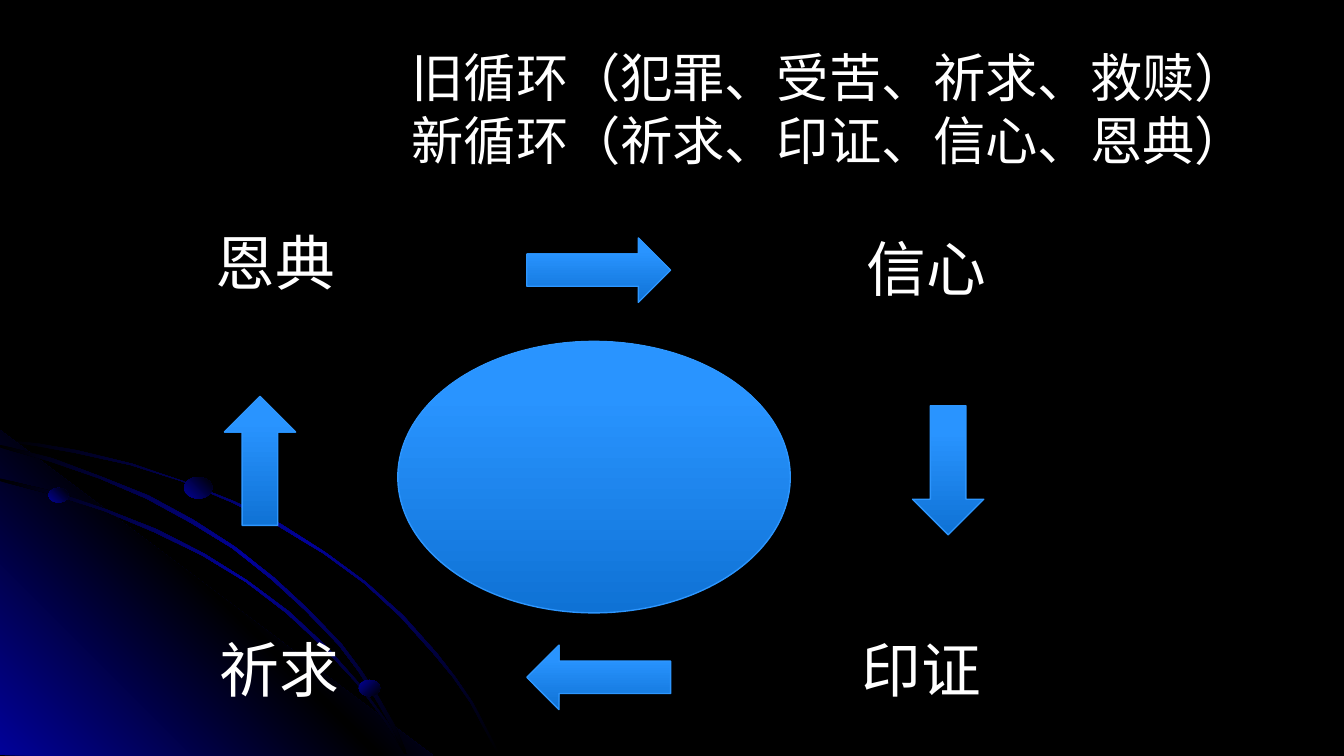
import pptx
import pptx.util
import pptx.dml.color
import pptx.enum.shapes
import pptx.enum.text
import pptx.oxml.ns
from lxml import etree

PX = 9144  # 100 px to the inch
WIDE = 1000
KIND = pptx.enum.shapes.MSO_SHAPE
NAVY, BLACK, WHITE = "010199", "000000", "FFFFFF"
GLOW = [(0, NAVY), (100, BLACK)]
STREAK = [(0, BLACK), (50, NAVY), (100, BLACK)]
CORNER = [(0, NAVY), (50, BLACK), (100, NAVY)]
AZURE = [(0, "0F72D5"), (80, "2994FF"), (100, "2B95FF")]

WEDGE = [(322, 562), (0, 562), (0, 320)]
ARCS = [
    [(57, 335), (28, 330), (0, 327), (0, 328), (28, 332), (56, 337),
     (97, 346), (135, 358), (173, 374), (208, 392), (241, 412), (271, 434),
     (298, 459), (323, 487), (337, 504), (350, 523), (360, 542), (370, 561),
     (372, 561), (362, 542), (352, 523), (339, 504), (325, 486), (300, 458),
     (272, 433), (242, 411), (209, 390), (174, 373), (136, 358), (98, 345)],
    [(285, 535), (294, 549), (301, 561), (303, 561), (296, 547), (286, 534),
     (266, 507), (242, 480), (215, 455), (184, 432), (152, 412), (117, 394),
     (79, 379), (41, 366), (0, 356), (0, 358), (39, 368), (77, 380),
     (115, 396), (150, 413), (183, 433), (213, 456), (240, 481), (265, 508)],
    [(0, 331), (0, 333), (36, 343), (74, 356), (109, 371), (142, 389),
     (173, 408), (202, 431), (227, 454), (252, 480), (267, 500), (280, 521),
     (292, 542), (301, 561), (303, 561), (294, 540), (282, 519), (269, 499),
     (254, 479), (229, 453), (204, 430), (175, 407), (144, 387), (111, 369),
     (76, 355), (39, 341)],
]
DOTS = [((36, 363, 15, 11), 315), ((267, 506, 16, 12), 45),
        ((137, 355, 21, 16), 315)]
CYCLE = [
    (KIND.FLOWCHART_CONNECTOR, (296, 254, 292, 202)),
    (KIND.RIGHT_ARROW, (392, 177, 107, 48)),
    (KIND.DOWN_ARROW, (679, 302, 53, 96)),
    (KIND.LEFT_ARROW, (392, 480, 107, 48)),
    (KIND.UP_ARROW, (167, 295, 53, 96)),
]
LABELS = [
    ("祈求", (60, 480, 296, 35)),
    ("恩典", (141, 165, 128, 60)),
    ("信心", (620, 165, 139, 68)),
    ("印证", (588, 475, 195, 45)),
]
HEADING = ["旧循环（犯罪、受苦、祈求、救赎）", "新循环（祈求、印证、信心、恩典）"]


def color(code):
    return pptx.dml.color.RGBColor.from_string(code)


def scale(box):
    return [n * PX for n in box]


def shade(shape, stops, angle):
    """Fill with gradient stops; the angle runs clockwise."""
    shape.shadow.inherit = False
    shape.fill.gradient()
    shape.fill.gradient_angle = 360 - angle
    qn = pptx.oxml.ns.qn
    group = shape.element.spPr.find(".//" + qn("a:gsLst"))
    for old in list(group):
        group.remove(old)
    for place, code in stops:
        stop = etree.SubElement(group, qn("a:gs"), pos=str(place * 1000))
        etree.SubElement(stop, qn("a:srgbClr"), val=code)


def add_curve(slide, points, stops, angle):
    pen = slide.shapes.build_freeform(*points[0], scale=PX)
    pen.add_line_segments(points[1:], close=True)
    shape = pen.convert_to_shape()
    shade(shape, stops, angle)
    shape.line.fill.background()


def add_shape(slide, kind, box, stops, angle, line=None):
    shape = slide.shapes.add_shape(kind, *scale(box))
    shade(shape, stops, angle)
    if line:
        shape.line.color.rgb = color(line)
        shape.line.width = pptx.util.Pt(0.75)
    else:
        shape.line.fill.background()


def write(shape, lines, size):
    frame = shape.text_frame
    frame.word_wrap = True
    frame.auto_size = pptx.enum.text.MSO_AUTO_SIZE.NONE
    frame.vertical_anchor = pptx.enum.text.MSO_ANCHOR.MIDDLE
    for i, line in enumerate(lines):
        para = frame.add_paragraph() if i else frame.paragraphs[0]
        para.alignment = pptx.enum.text.PP_ALIGN.CENTER
        run = para.add_run()
        run.text = line
        run.font.name = "Arial"
        run.font.size = pptx.util.Pt(size)
        run.font.color.rgb = color(WHITE)


def add_title(slide, lines, box):
    title = slide.shapes.title
    title.left, title.top, title.width, title.height = scale(box)
    write(title, lines, 28)


def add_label(slide, text, box):
    write(slide.shapes.add_textbox(*scale(box)), [text], 32)


def add_decor(slide):
    first, *rest = ARCS
    add_curve(slide, first, STREAK, 45)
    add_curve(slide, WEDGE, CORNER, 315)
    for arc in rest:
        add_curve(slide, arc, STREAK, 45)
    for box, angle in DOTS:
        add_shape(slide, KIND.OVAL, box, GLOW, angle)


def main():
    deck = pptx.Presentation()
    deck.slide_width = WIDE * PX
    deck.slide_height = WIDE * PX * 9 // 16
    slide = deck.slides.add_slide(deck.slide_layouts[5])
    slide.background.fill.solid()
    slide.background.fill.fore_color.rgb = color(BLACK)
    add_decor(slide)
    add_title(slide, HEADING, (183, 40, 868, 81))
    for kind, box in CYCLE:
        add_shape(slide, kind, box, AZURE, 270, "2D96FE")
    for text, box in LABELS:
        add_label(slide, text, box)
    deck.save("out.pptx")


if __name__ == "__main__":
    main()
